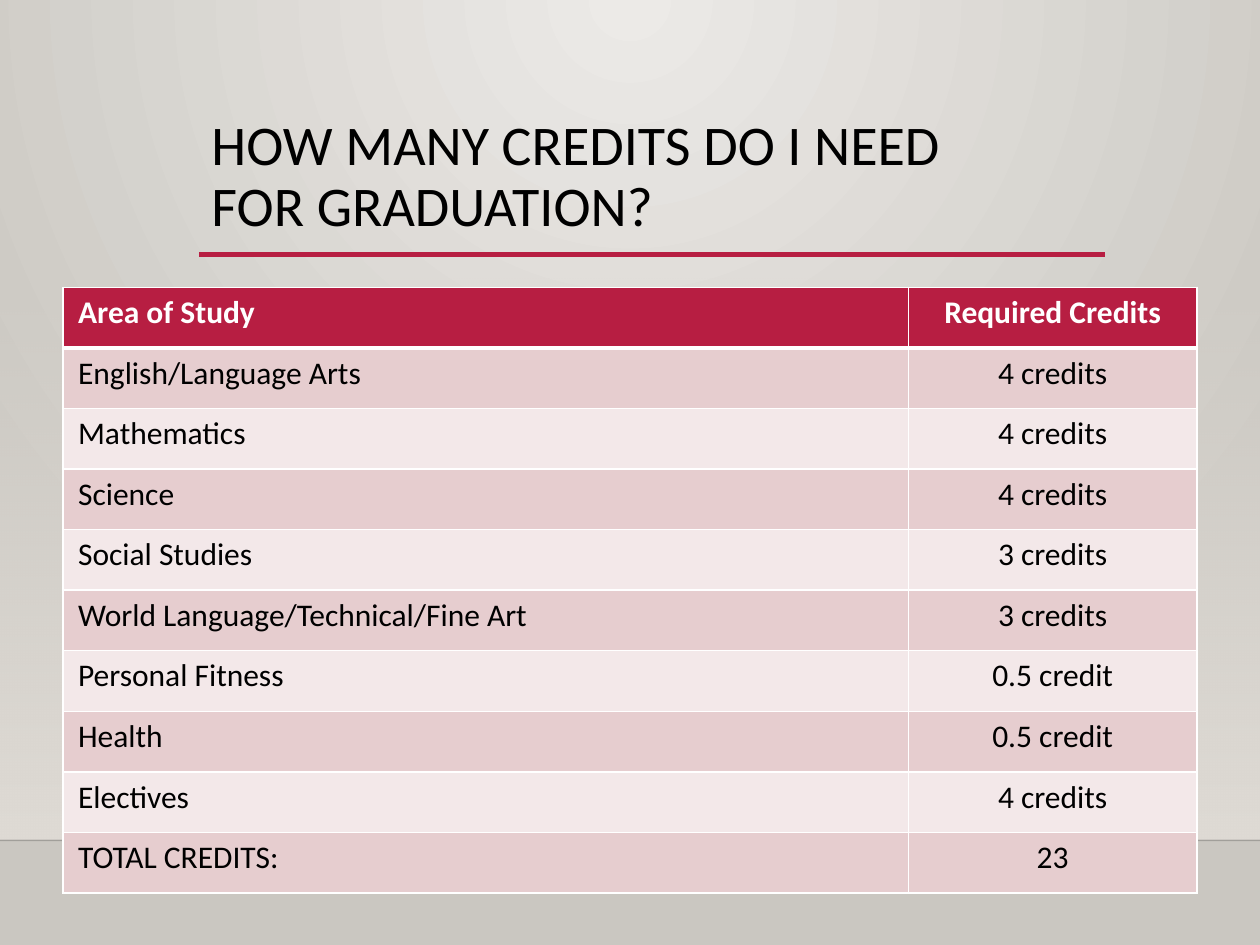
from lxml import etree
from pptx import Presentation
from pptx.dml.color import RGBColor
from pptx.enum import shapes, text
from pptx.oxml import ns
from pptx.util import Inches, Pt

FONT = "Calibri"
BLACK = RGBColor(0x00, 0x00, 0x00)
WHITE = RGBColor(0xFF, 0xFF, 0xFF)
CRIMSON = RGBColor(0xB7, 0x1E, 0x42)
PINK = RGBColor(0xE6, 0xCD, 0xCF)
PALE_PINK = RGBColor(0xF3, 0xE8, 0xE9)
WALL = RGBColor(0xDF, 0xDB, 0xD5)
GLOW = RGBColor(0xEC, 0xEA, 0xE7)
EDGE = RGBColor(0xCA, 0xC7, 0xC1)

CREDITS = [
    ("Area of Study", "Required Credits"),
    ("English/Language Arts", "4 credits"),
    ("Mathematics", "4 credits"),
    ("Science", "4 credits"),
    ("Social Studies", "3 credits"),
    ("World Language/Technical/Fine Art", "3 credits"),
    ("Personal Fitness", "0.5 credit"),
    ("Health", "0.5 credit"),
    ("Electives", "4 credits"),
    ("TOTAL CREDITS:", "23"),
]


def add_element(parent, tag, **attributes):
    child = etree.SubElement(parent, ns.qn(tag))
    for name, value in attributes.items():
        child.set(name, str(value))
    return child


def add_color(parent, color, opacity=100):
    node = add_element(parent, "a:srgbClr", val=color)
    if opacity < 100:
        add_element(node, "a:alpha", val=opacity * 1000)


def set_gradient(fill, owner, stops):
    """Fill owner with (color, opacity) stops; return the gradient element."""
    fill.gradient()
    gradient = owner.find(".//" + ns.qn("a:gradFill"))
    for child in list(gradient):
        gradient.remove(child)
    stop_list = add_element(gradient, "a:gsLst")
    for i, (color, opacity) in enumerate(stops):
        stop = add_element(stop_list, "a:gs", pos=i * 100000)
        add_color(stop, color, opacity)
    return gradient


def paint_background(slide):
    gradient = set_gradient(slide.background.fill, slide.element,
                            [(GLOW, 100), (EDGE, 100)])
    circle = add_element(gradient, "a:path", path="circle")
    add_element(circle, "a:fillToRect", l=43000, t=0, r=43000, b=100000)


def add_wall(slide):
    wall = slide.shapes.add_shape(shapes.MSO_SHAPE.RECTANGLE, 0, Inches(2.2),
                                  Inches(10), Inches(4.46))
    wall.shadow.inherit = False
    wall.line.fill.background()
    gradient = set_gradient(wall.fill, wall.element, [(WALL, 0), (WALL, 100)])
    add_element(gradient, "a:lin", ang=5400000, scaled=0)


def add_rule(slide, left, right, y, color, width, opacity=100):
    rule = slide.shapes.add_connector(shapes.MSO_CONNECTOR.STRAIGHT, Inches(left),
                                      Inches(y), Inches(right), Inches(y))
    rule.line.color.rgb = color
    rule.line.width = Pt(width)
    if opacity < 100:
        node = rule.element.spPr.find(".//" + ns.qn("a:srgbClr"))
        add_element(node, "a:alpha", val=opacity * 1000)
    add_element(rule.element.spPr, "a:effectLst")


def style_font(paragraph, size, color, bold=False):
    font = paragraph.font
    font.name, font.size, font.bold = FONT, Pt(size), bold
    font.color.rgb = color


def add_title(slide):
    box = slide.shapes.add_textbox(Inches(1.58), Inches(0.88), Inches(7.19), Inches(1.15))
    frame = box.text_frame
    frame.word_wrap = True
    frame.vertical_anchor = text.MSO_ANCHOR.TOP
    title = frame.paragraphs[0]
    title.text = "HOW MANY CREDITS DO I NEED\vFOR GRADUATION?"
    title.line_spacing = 0.9
    style_font(title, 32, BLACK)


def add_borders(cell, top, bottom):
    properties = cell._tc.get_or_add_tcPr()
    for tag, width in (("a:lnL", 1), ("a:lnR", 1), ("a:lnT", top), ("a:lnB", bottom)):
        line = add_element(properties, tag, w=Pt(width))
        add_color(add_element(line, "a:solidFill"), WHITE)


def style_cell(cell, row, column):
    header = row == 0
    add_borders(cell, top=3 if row == 1 else 1, bottom=3 if header else 1)
    cell.fill.solid()
    cell.fill.fore_color.rgb = CRIMSON if header else (PALE_PINK, PINK)[row % 2]
    cell.margin_left = cell.margin_right = Inches(0.12)
    cell.margin_top = cell.margin_bottom = Inches(0.05)
    paragraph = cell.text_frame.paragraphs[0]
    if column == 1:
        paragraph.alignment = text.PP_ALIGN.CENTER
    style_font(paragraph, 18, WHITE if header else BLACK, bold=header)


def add_credit_table(slide):
    table = slide.shapes.add_table(len(CREDITS), 2, Inches(0.5), Inches(2.28),
                                   Inches(9), Inches(4.81)).table
    for column, width in zip(table.columns, (6.71, 2.29)):
        column.width = Inches(width)
    for row, values in enumerate(CREDITS):
        for column, value in enumerate(values):
            cell = table.cell(row, column)
            cell.text = value
            style_cell(cell, row, column)


def main():
    deck = Presentation()
    deck.slide_width, deck.slide_height = Inches(10), Inches(7.5)
    slide = deck.slides.add_slide(deck.slide_layouts[6])
    paint_background(slide)
    add_wall(slide)
    add_rule(slide, 0, 10, 6.67, BLACK, 1, opacity=20)
    add_rule(slide, 1.58, 8.77, 2.02, CRIMSON, 2.5)
    add_title(slide)
    add_credit_table(slide)
    deck.save("out.pptx")


if __name__ == "__main__":
    main()
